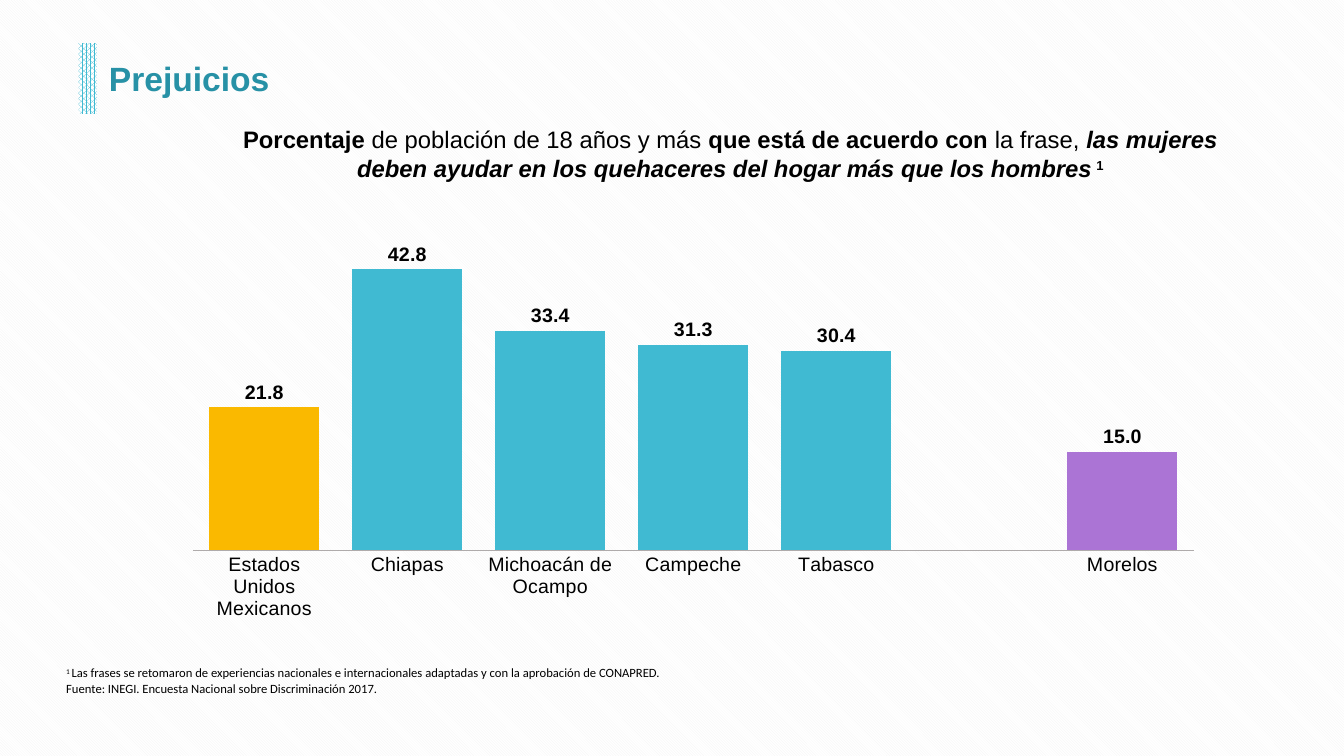
import pptx
import pptx.chart.data
import pptx.dml.color
import pptx.enum.chart
import pptx.enum.dml
import pptx.enum.shapes
import pptx.enum.text
import pptx.oxml
import pptx.oxml.ns
import pptx.util

Cm = pptx.util.Cm
ALIGN = pptx.enum.text.PP_ALIGN
ANCHOR = pptx.enum.text.MSO_ANCHOR
PATTERN = pptx.enum.dml.MSO_PATTERN

# Content: a paragraph is a list of (text, style) runs
TITLE = [[("Prejuicios", "title")]]
QUESTION = [[
    ("Porcentaje ", "strong"),
    ("de población de 18 años y más ", "plain"),
    ("que está de acuerdo con ", "strong"),
    ("la frase, ", "plain"),
    ("las mujeres deben ayudar en los quehaceres del hogar más que los hombres", "quote"),
    (" 1", "mark"),
]]
NOTES = [
    [("1 ", "note_mark"),
     ("Las frases se retomaron de experiencias nacionales e internacionales "
      "adaptadas y con la aprobación de CONAPRED. ", "note")],
    [("Fuente: INEGI. Encuesta Nacional sobre Discriminación 2017.", "note")],
]
AGREEMENT = [
    ("Estados Unidos Mexicanos", 21.8, "country"),
    ("Chiapas", 42.8, "state"),
    ("Michoacán de Ocampo", 33.4, "state"),
    ("Campeche", 31.3, "state"),
    ("Tabasco", 30.4, "state"),
    ("", None, "state"),
    ("Morelos", 15.0, "local"),
]

THEME = {
    "title": "2791A6", "text": "000000", "white": "FFFFFF", "hatch": "F2F2F2",
    "axis": "AFABAB", "state": "40BAD2", "country": "FAB900", "local": "AB74D5",
    "title_size": 24, "question_size": 17, "mark_size": 16, "chart_size": 14, "note_size": 9,
    "font": "Arial", "note_font": "Calibri",
}


def rgb(name):
    return pptx.dml.color.RGBColor.from_string(THEME[name])


def style(size, font="font", bold=False, italic=False):
    return {"size": pptx.util.Pt(THEME[size]), "name": THEME[font], "bold": bold, "italic": italic}


STYLES = {
    "title": style("title_size", bold=True),
    "strong": style("question_size", bold=True),
    "plain": style("question_size"),
    "quote": style("question_size", bold=True, italic=True),
    "mark": style("mark_size", bold=True),
    "note": style("note_size", "note_font"),
    "note_mark": style("note_size", "note_font"),
}
SUPERSCRIPTS = {"mark", "note_mark"}


def set_format(target, values):
    for name, value in values.items():
        setattr(target, name, value)


def write(sp, paragraphs, align, anchor):
    tf = sp.text_frame
    set_format(tf, {"word_wrap": True, "vertical_anchor": anchor,
                    "auto_size": pptx.enum.text.MSO_AUTO_SIZE.NONE})
    for i, runs in enumerate(paragraphs):
        p = tf.add_paragraph() if i else tf.paragraphs[0]
        p.alignment = align
        for text, name in runs:
            r = p.add_run()
            r.text = text
            set_format(r.font, STYLES[name])
            r.font.color.rgb = rgb("title" if name == "title" else "text")
            if name in SUPERSCRIPTS:
                r.font._element.set("baseline", "30000")


def fill_pattern(fill, pattern, fore):
    fill.patterned()
    fill.pattern = pattern
    fill.fore_color.rgb = rgb(fore)
    fill.back_color.rgb = rgb("white")


def place_plot(chart, x, y, w, h):
    """Fix the inner plot area as fractions of the chart."""
    area = chart._chartSpace.chart.plotArea
    for old in area.findall(pptx.oxml.ns.qn("c:layout")):
        area.remove(old)
    fields = [("layoutTarget", "inner"), ("xMode", "edge"), ("yMode", "edge"),
              ("x", x), ("y", y), ("w", w), ("h", h)]
    inner = "".join(f'<c:{tag} val="{value}"/>' for tag, value in fields)
    area.insert(0, pptx.oxml.parse_xml(
        f'<c:layout {pptx.oxml.ns.nsdecls("c")}><c:manualLayout>{inner}</c:manualLayout></c:layout>'))


def add_agreement_chart(slide):
    data = pptx.chart.data.CategoryChartData(number_format="0.0")
    data.categories = [place for place, _, _ in AGREEMENT]
    data.add_series("Porcentaje", [value for _, value, _ in AGREEMENT])
    chart = slide.shapes.add_chart(
        pptx.enum.chart.XL_CHART_TYPE.COLUMN_CLUSTERED,
        Cm(4.34), Cm(5.74), Cm(26.01), Cm(9.88), data).chart
    set_format(chart, {"has_legend": False, "has_title": False})
    set_format(chart.font, style("chart_size"))
    chart.font.color.rgb = rgb("text")
    place_plot(chart, 0.02, 0.07, 0.97, 0.76)

    set_format(chart.value_axis, {"visible": False, "has_major_gridlines": False,
                                  "minimum_scale": 0, "maximum_scale": 45})
    axis = chart.category_axis
    axis.major_tick_mark = pptx.enum.chart.XL_TICK_MARK.NONE
    axis.format.line.color.rgb = rgb("axis")
    axis.format.line.width = pptx.util.Pt(1)

    plot = chart.plots[0]
    set_format(plot, {"gap_width": 30, "vary_by_categories": False, "has_data_labels": True})
    labels = plot.data_labels
    set_format(labels, {"show_value": True, "number_format": "0.0",
                        "number_format_is_linked": False,
                        "position": pptx.enum.chart.XL_LABEL_POSITION.OUTSIDE_END})
    set_format(labels.font, style("chart_size", bold=True))
    labels.font.color.rgb = rgb("text")

    series = plot.series[0]
    series.format.fill.solid()
    series.format.fill.fore_color.rgb = rgb("state")
    for i, (_, _, group) in enumerate(AGREEMENT):
        if group != "state":
            fill = series.points[i].format.fill
            fill.solid()
            fill.fore_color.rgb = rgb(group)


def main():
    prs = pptx.Presentation()
    prs.slide_width, prs.slide_height = Cm(33.87), Cm(19.05)
    slide = prs.slides.add_slide(prs.slide_layouts[5])
    fill_pattern(slide.background.fill, PATTERN.LIGHT_DOWNWARD_DIAGONAL, "hatch")

    band = slide.shapes.add_shape(pptx.enum.shapes.MSO_SHAPE.RECTANGLE,
                                  Cm(1.98), Cm(1.09), Cm(0.46), Cm(1.78))
    band.shadow.inherit = False
    band.line.fill.background()
    fill_pattern(band.fill, PATTERN.PERCENT_75, "state")

    title = slide.shapes.title
    set_format(title, {"left": Cm(2.49), "top": Cm(0.91), "width": Cm(27.48), "height": Cm(2.11)})
    write(title, TITLE, ALIGN.LEFT, ANCHOR.MIDDLE)

    notes = slide.shapes.add_textbox(Cm(1.42), Cm(16.64), Cm(15.52), Cm(1.02))
    write(notes, NOTES, ALIGN.JUSTIFY, ANCHOR.TOP)
    question = slide.shapes.add_textbox(Cm(5.69), Cm(3.02), Cm(25.43), Cm(1.7))
    write(question, QUESTION, ALIGN.CENTER, ANCHOR.BOTTOM)
    add_agreement_chart(slide)

    prs.save("out.pptx")


if __name__ == "__main__":
    main()
